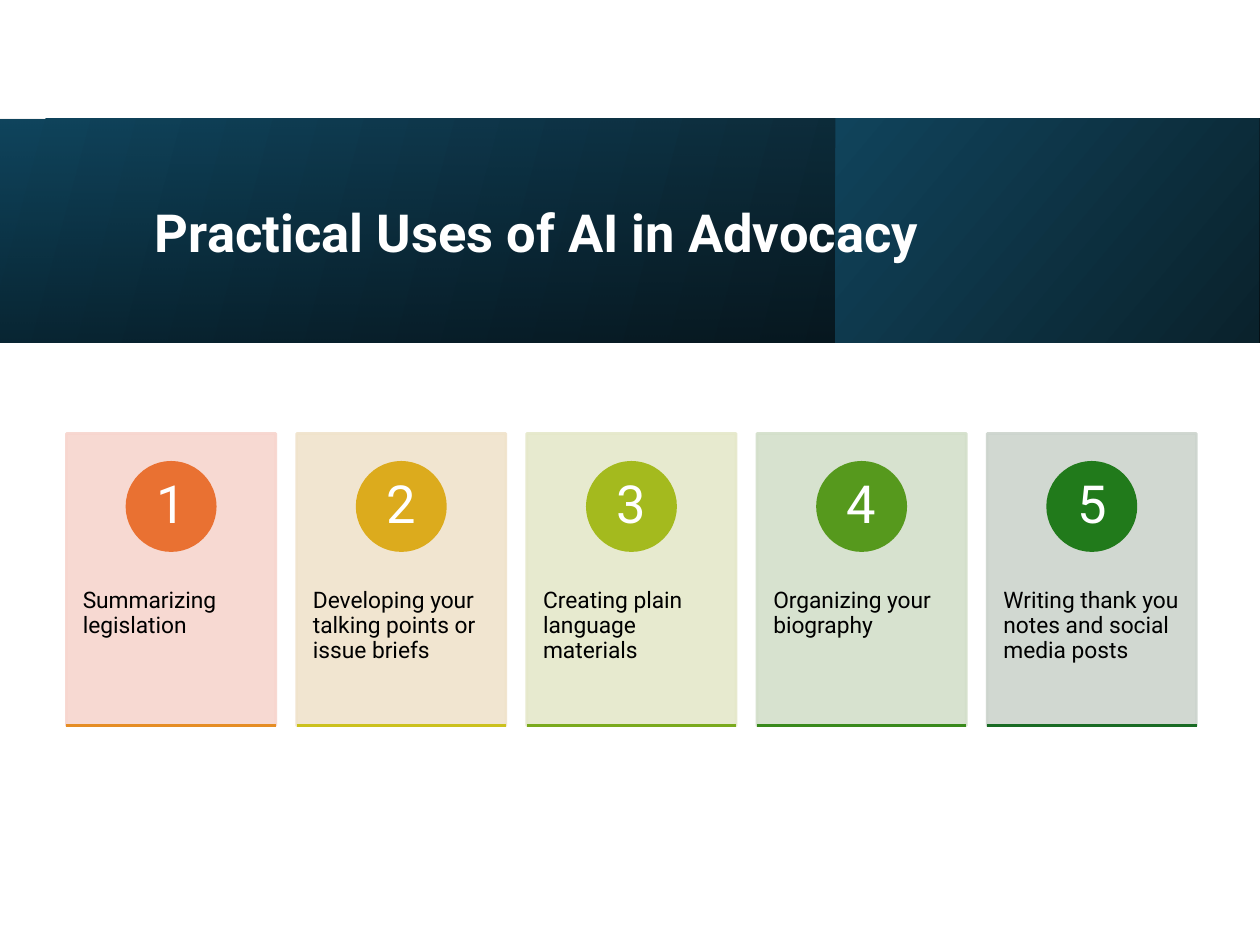
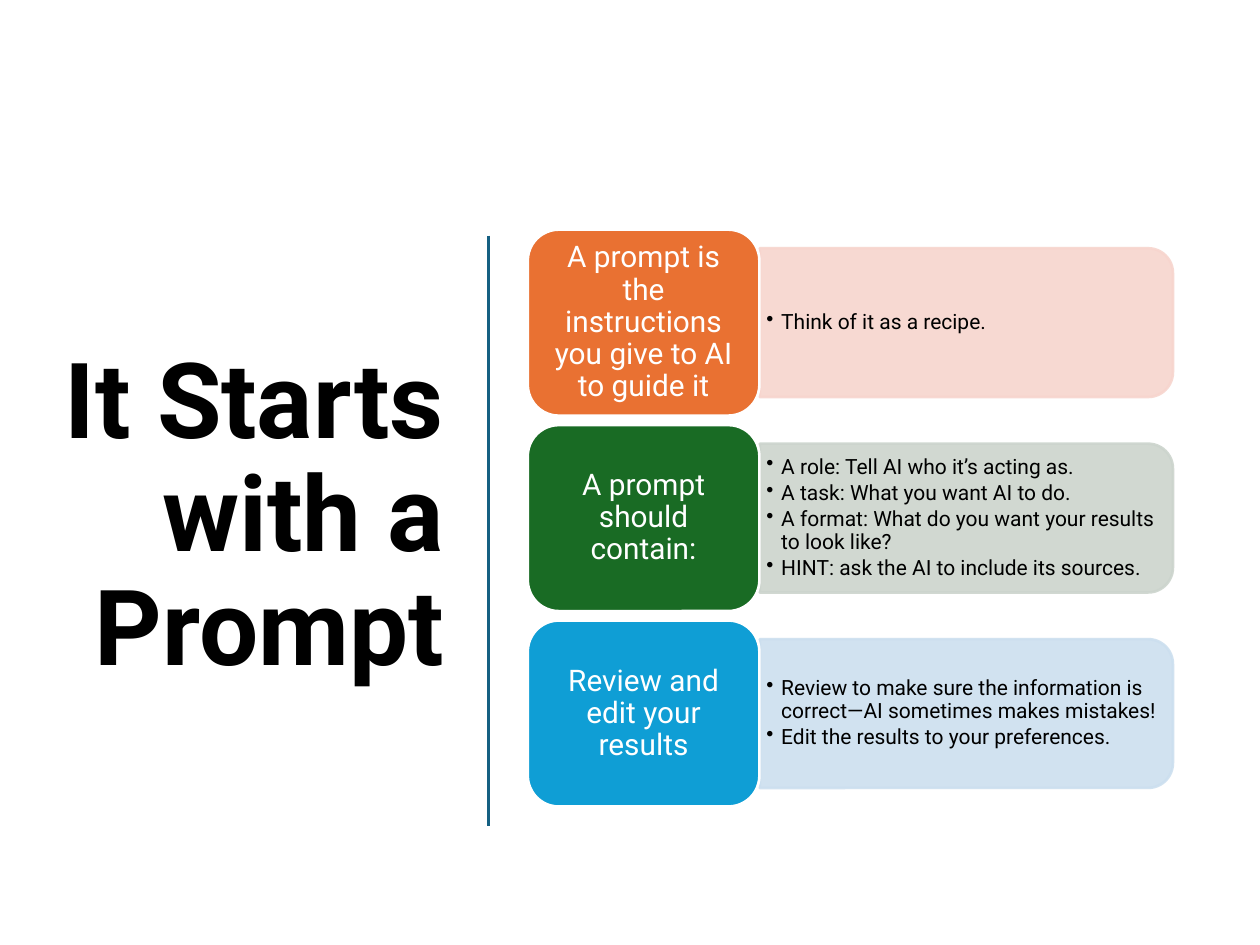
from lxml.etree import SubElement
from pptx import Presentation
from pptx.dml.color import RGBColor
from pptx.enum.shapes import MSO_CONNECTOR, MSO_SHAPE
from pptx.enum.text import MSO_ANCHOR, MSO_AUTO_SIZE, PP_ALIGN
from pptx.oxml.ns import qn
from pptx.util import Cm, Pt

FONT = "Roboto"
HUES = {
    "white": "FFFFFF", "black": "000000", "teal": "104862", "rule": "156082",
    "night": "0C1F29", "sea": "10435B", "deep": "0A222C",
    "orange": "E97132", "green": "196B24", "blue": "0F9ED5",
    "rose": "F7D5CE", "gray": "CCD4CD", "sky": "CCDFEF",
    "gold": "DCAB1D", "lime": "A4BA1E", "leaf": "56991D", "fern": "217A1B",
    "sand": "F0E3CB", "pale": "E5E8CA", "mint": "D3DFCA",
    "amber": "E58D25", "straw": "CBC11E", "grass": "7AAA1E", "moss": "398A1C",
}
CARDS = [
    ("Summarizing legislation", "rose", "orange", "amber"),
    ("Developing your talking points or issue briefs", "sand", "gold", "straw"),
    ("Creating plain language materials", "pale", "lime", "grass"),
    ("Organizing your biography", "mint", "leaf", "moss"),
    ("Writing thank you notes and social media posts", "gray", "fern", "green"),
]
STEPS = [
    ("A prompt is the instructions you give to AI to guide it", "orange", "rose",
     ["Think of it as a recipe."]),
    ("A prompt should contain:", "green", "gray",
     ["A role: Tell AI who it’s acting as.",
      "A task: What you want AI to do.",
      "A format: What do you want your results to look like?",
      "HINT: ask the AI to include its sources."]),
    ("Review and edit your results", "blue", "sky",
     ["Review to make sure the information is correct—AI sometimes makes mistakes!",
      "Edit the results to your preferences."]),
]


def hue(name):
    return RGBColor.from_string(HUES[name])


def fade(tint, share):
    SubElement(tint, qn("a:alpha"), val=str(share * 1000))


def write(frame, *lines, size=13, color="black", bold=False, align=PP_ALIGN.LEFT,
          anchor=MSO_ANCHOR.MIDDLE, pad=(0.25, 0.13), gap=0, bullet=False):
    frame.word_wrap = True
    frame.auto_size = MSO_AUTO_SIZE.NONE
    frame.vertical_anchor = anchor
    frame.margin_left = frame.margin_right = Cm(pad[0])
    frame.margin_top = frame.margin_bottom = Cm(pad[1])
    for i, line in enumerate(lines):
        para = frame.add_paragraph() if i else frame.paragraphs[0]
        para.alignment = align
        para.line_spacing = 0.9
        para.space_after = Pt(gap)
        run = para.add_run()
        run.text = line
        font = run.font
        font.name, font.size, font.bold = FONT, Pt(size), bold
        font.color.rgb = hue(color)
        if bullet:
            props = para._p.get_or_add_pPr()
            props.set("marL", str(Cm(0.3)))
            props.set("indent", str(-Cm(0.3)))
            SubElement(props, qn("a:buChar"), char="•")


class Deck:
    def __init__(self):
        self.show = Presentation()
        self.show.slide_width, self.show.slide_height = Cm(25.4), Cm(19.05)
        self.slide = None

    def page(self):
        self.slide = self.show.slides.add_slide(self.show.slide_layouts[5])

    def title(self, text, box, **style):
        head = self.slide.shapes.title
        head.left, head.top, head.width, head.height = map(Cm, box)
        self.slide.shapes._spTree.append(head._element)
        write(head.text_frame, text, bold=True, **style)

    def shape(self, kind, box, fill, line=None, alpha=100):
        item = self.slide.shapes.add_shape(kind, *map(Cm, box))
        item.shadow.inherit = False
        item.fill.solid()
        item.fill.fore_color.rgb = hue(fill)
        item.line.color.rgb = hue(line or fill)
        item.line.width = Pt(1.5)
        if alpha < 100:
            for tint in item._element.spPr.iter(qn("a:srgbClr")):
                fade(tint, alpha)
        return item

    def blend(self, box, start, end, angle, alphas=None):
        item = self.shape(MSO_SHAPE.RECTANGLE, box, start)
        item.line.fill.background()
        item.fill.gradient()
        item.fill.gradient_angle = 360 - angle
        for stop, name in zip(item.fill.gradient_stops, (start, end)):
            stop.color.rgb = hue(name)
        if alphas:
            for tint, share in zip(item._element.spPr.iter(qn("a:srgbClr")), alphas):
                fade(tint, share)

    def text(self, box, *lines, **style):
        item = self.slide.shapes.add_textbox(*map(Cm, box))
        write(item.text_frame, *lines, **style)

    def rule(self, x1, y1, x2, y2, color, width):
        item = self.slide.shapes.add_connector(
            MSO_CONNECTOR.STRAIGHT, Cm(x1), Cm(y1), Cm(x2), Cm(y2))
        item.line.color.rgb = hue(color)
        item.line.width = Pt(width)
        SubElement(item._element.spPr, qn("a:effectLst"))

    def card(self, num, left, text, fill, dot, edge):
        top, wide, tall = 8.74, 4.22, 5.89
        self.shape(MSO_SHAPE.RECTANGLE, (left, top, wide, tall), fill, alpha=90)
        self.text((left, 10.97, wide, 3.53), text,
                  anchor=MSO_ANCHOR.TOP, pad=(0.33, 0.91))
        disc = self.shape(MSO_SHAPE.OVAL, (left + 1.22, 9.32, 1.78, 1.78), dot)
        write(disc.text_frame, str(num), size=30, color="white",
              align=PP_ALIGN.CENTER, pad=(0, 0))
        self.rule(left, top + tall, left + wide, top + tall, edge, 1.5)

    def step(self, top, text, fill, tint, notes):
        bar = self.shape(MSO_SHAPE.ROUND_2_SAME_RECTANGLE,
                         (17.98, top - 2.29, 3, 8.33), tint, alpha=90)
        bar.rotation = 90
        self.text((15.32, top + 0.51, 8.18, 2.72), *notes, size=12,
                  pad=(0.13, 0.08), gap=2, bullet=True)
        key = self.shape(MSO_SHAPE.ROUNDED_RECTANGLE,
                         (10.64, top, 4.67, 3.75), fill, "white")
        write(key.text_frame, text, size=17, color="white",
              align=PP_ALIGN.CENTER, pad=(0.18, 0.1))


def main():
    deck = Deck()
    deck.page()
    band = (0, 2.39, 25.4, 4.52)
    deck.blend(band, "teal", "night", 15)
    deck.blend(band, "black", "black", 90, (5, 48))
    deck.blend((16.84, 2.38, 8.54, 4.53), "sea", "deep", 40)
    deck.title("Practical Uses of AI in Advocacy", (2.87, 3.1, 20.24, 3.28),
               size=30, color="white")
    for i, card in enumerate(CARDS):
        deck.card(i + 1, 1.34 + 4.64 * i, *card)

    deck.page()
    deck.title("It Starts with a Prompt", (1, 4.62, 8.2, 11.63),
               size=60, align=PP_ALIGN.RIGHT)
    deck.rule(9.85, 4.75, 9.85, 16.66, "rule", 2)
    for i, step in enumerate(STEPS):
        deck.step(4.63 + 3.94 * i, *step)
    deck.show.save("out.pptx")


if __name__ == "__main__":
    main()
